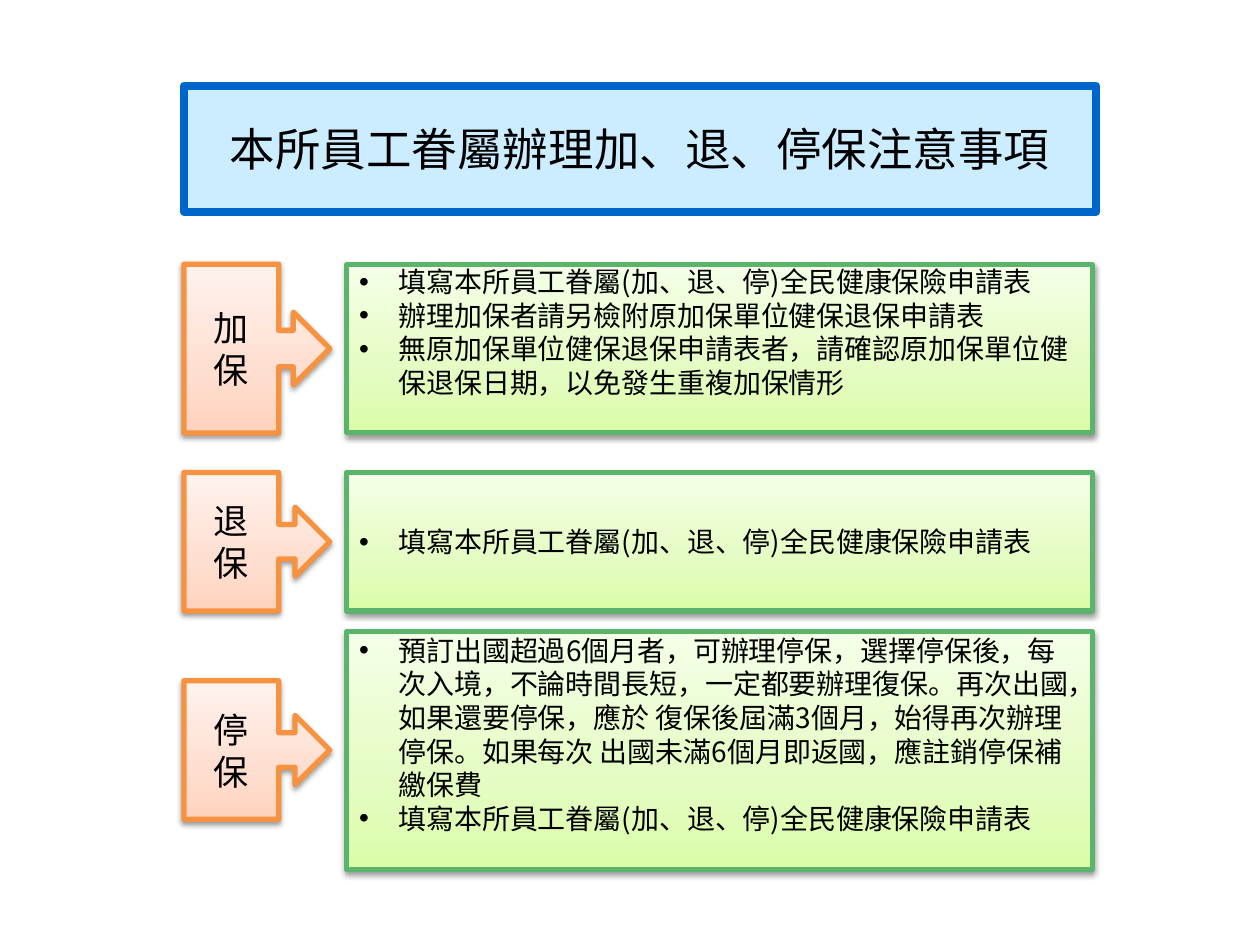
from lxml import etree
from pptx import Presentation
from pptx.dml.color import RGBColor
from pptx.enum.shapes import MSO_SHAPE
from pptx.enum.text import MSO_ANCHOR, MSO_AUTO_SIZE, PP_ALIGN
from pptx.oxml import parse_xml
from pptx.oxml.ns import qn
from pptx.util import Pt

CALLOUT = MSO_SHAPE.RIGHT_ARROW_CALLOUT
MIDDLE, NO_FIT = MSO_ANCHOR.MIDDLE, MSO_AUTO_SIZE.NONE
LEFT, CENTER = PP_ALIGN.LEFT, PP_ALIGN.CENTER
NS = 'xmlns:a="http://schemas.openxmlformats.org/drawingml/2006/main"'

THEME = {
    "font": "Noto Sans CJK SC", "ink": "000000",
    "title": 26, "label": 20, "list": 16,
    "banner": "CCECFF", "frame": "0066CC",
    "step": ("FFD2BD", "FFDED0", "FFF2ED"), "step_line": "F69240",
    "panel": ("DAFDA7", "E4FCC2", "F5FFE7"), "panel_line": "5BB36C",
}


def set_text(shape, lines, size, align):
    frame = shape.text_frame
    frame.text = "\n".join(lines)
    frame.word_wrap = True
    frame.auto_size = NO_FIT
    frame.vertical_anchor = MIDDLE
    for para in frame.paragraphs:
        para.alignment = align
        para.line_spacing = Pt(size * 1.2)
        para.space_before = Pt(0)
        for run in para.runs:
            font = run.font
            font.name, font.size, font.bold = THEME["font"], Pt(size), False
            font.color.rgb = RGBColor.from_string(THEME["ink"])
            east = etree.Element(qn("a:ea"), typeface=THEME["font"])
            font._element.find(qn("a:latin")).addnext(east)


def set_glow(shape, colors, line):
    # Three-stop gradient running upward, outline and soft shadow
    props = shape._element.spPr
    stops = "".join(
        f'<a:gs pos="{pos}"><a:srgbClr val="{color}"/></a:gs>'
        for pos, color in zip((0, 35000, 100000), colors))
    props.append(parse_xml(
        f'<a:gradFill {NS} rotWithShape="1"><a:gsLst>{stops}</a:gsLst>'
        '<a:lin ang="16200000" scaled="0"/></a:gradFill>'))
    shape.line.color.rgb = RGBColor.from_string(line)
    shape.line.width = Pt(3)
    props.append(parse_xml(
        f'<a:effectLst {NS}><a:outerShdw blurRad="40000" dist="20000" '
        'dir="5400000" rotWithShape="0"><a:srgbClr val="000000">'
        '<a:alpha val="38000"/></a:srgbClr></a:outerShdw></a:effectLst>'))


deck = Presentation()
deck.slide_width, deck.slide_height = Pt(720), Pt(540)
slide = deck.slides.add_slide(deck.slide_layouts[4])
title, *bodies = slide.placeholders

# Title banner
title.left, title.top, title.width, title.height = (
    Pt(105.1), Pt(49), Pt(521.3), Pt(72))
title._element.spPr.append(parse_xml(
    f'<a:prstGeom {NS} prst="roundRect"><a:avLst/></a:prstGeom>'))
title.fill.solid()
title.fill.fore_color.rgb = RGBColor.from_string(THEME["banner"])
title.line.color.rgb = RGBColor.from_string(THEME["frame"])
title.line.width = Pt(4.5)
set_text(title, ["本所員工眷屬辦理加、退、停保注意事項"], THEME["title"], CENTER)

# Rows: label lines, label top and height, panel top and height, room below, list
FORM = "填寫本所員工眷屬(加、退、停)全民健康保險申請表"
ROWS = [
    (["加", "保"], 151, 96.5, 151.2, 96, 19, [
        FORM,
        "辦理加保者請另檢附原加保單位健保退保申請表",
        "無原加保單位健保退保申請表者，請確認原加保單位健保退保日期，"
        "以免發生重複加保情形"]),
    (["退保"], 270, 79.2, 270, 79.2, 0, [FORM]),
    (["停保"], 389, 79.2, 361, 136, 19, [
        "預訂出國超過6個月者，可辦理停保，選擇停保後，每次入境，"
        "不論時間長短，一定都要辦理復保。再次出國，如果還要停保，"
        "應於 復保後屆滿3個月，始得再次辦理停保。如果每次 "
        "出國未滿6個月即返國，應註銷停保補繳保費",
        FORM]),
]

for body, row in zip(bodies, ROWS):
    label, top, high, box_top, box_high, room, items = row

    # Arrow label
    step = slide.shapes.add_shape(CALLOUT, Pt(105.1), Pt(top), Pt(83.3), Pt(high))
    set_glow(step, THEME["step"], THEME["step_line"])
    set_text(step, label, THEME["label"], CENTER)
    step.text_frame.margin_left = step.text_frame.margin_right = Pt(8)

    # Bulleted panel
    body.left, body.top, body.width, body.height = (
        Pt(198), Pt(box_top), Pt(426.2), Pt(box_high))
    set_glow(body, THEME["panel"], THEME["panel_line"])
    set_text(body, items, THEME["list"], LEFT)
    body.text_frame.margin_top, body.text_frame.margin_bottom = Pt(0), Pt(room)
    for para in body.text_frame.paragraphs:
        props = para._p.get_or_add_pPr()
        props.set("marL", str(Pt(22.5)))
        props.set("indent", str(-Pt(22.5)))
        etree.SubElement(props, qn("a:buFont"), typeface="Arial")
        etree.SubElement(props, qn("a:buChar"), char="•")

# Remove the unused placeholder
for spare in bodies[len(ROWS):]:
    spare._element.getparent().remove(spare._element)

deck.save("out.pptx")
